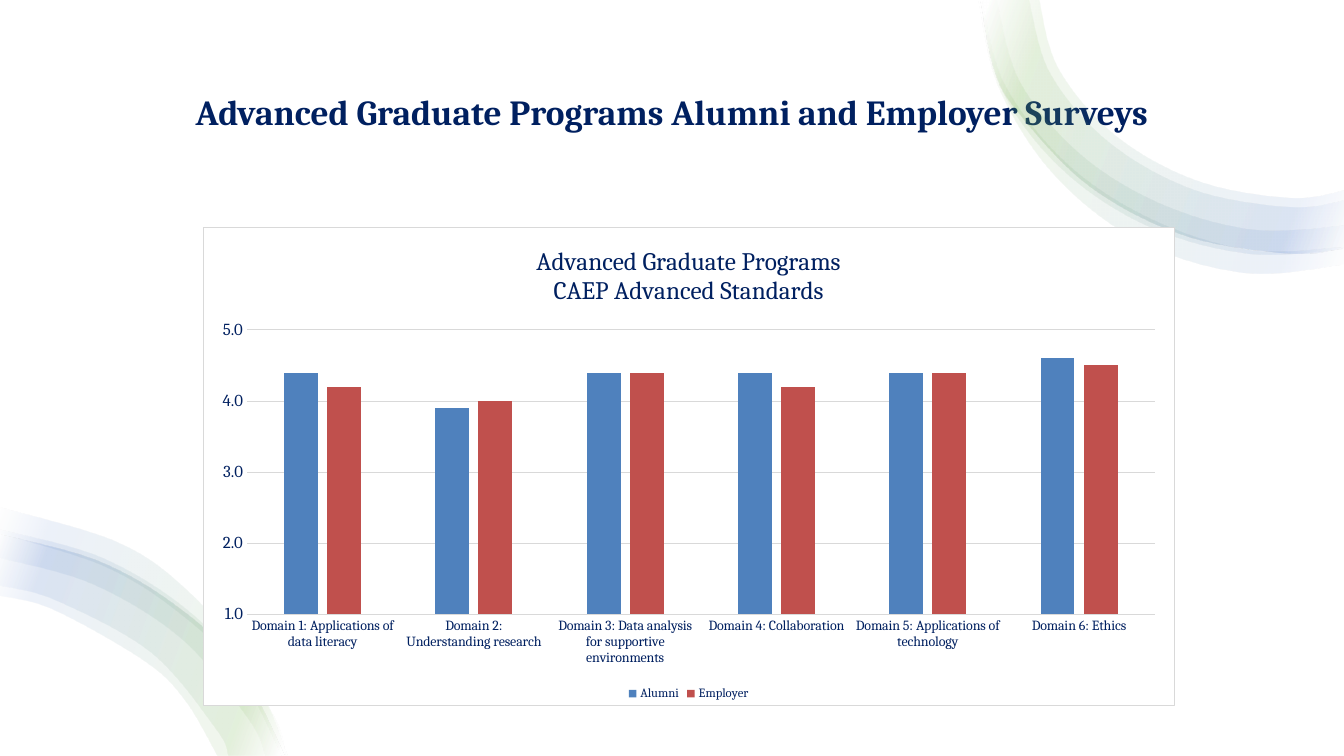
import lxml.etree
import pptx
import pptx.chart.data
import pptx.dml.color
import pptx.enum.chart
import pptx.enum.shapes
import pptx.enum.text
import pptx.oxml
import pptx.oxml.ns
import pptx.util

Inches, Pt = pptx.util.Inches, pptx.util.Pt
RGB = pptx.dml.color.RGBColor
qn = pptx.oxml.ns.qn
NAVY = RGB(0x00, 0x20, 0x60)
WHITE = RGB(0xFF, 0xFF, 0xFF)
GREY = RGB(0xD9, 0xD9, 0xD9)
GREEN = RGB(0x70, 0xAD, 0x47)
SKY = RGB(0x44, 0x72, 0xC4)
BLUE = RGB(0x4F, 0x81, 0xBD)
RED = RGB(0xC0, 0x50, 0x4D)
FONT = "Cambria"
STOPS = [(2, WHITE), (16, GREEN), (85, SKY), (100, WHITE)]
OPAQUE = 10  # percent

# Ribbon edges as (outer, inner) point lists, in inches within each corner box
TOP_RIM = [(.03, 0), (.16, .67), (.39, 1.1), (1.1, 1.84), (2.04, 2.33),
           (3.09, 2.51), (3.64, 2.45)]
TOP = [
    (TOP_RIM, [(.61, 0), (.8, .68), (1.36, 1.34), (2.17, 1.79),
               (3.09, 1.96), (3.64, 1.88)]),
    (TOP_RIM, [(.51, 0), (.72, .73), (1.3, 1.41), (2.14, 1.88),
               (3.09, 2.05), (3.64, 1.98)]),
    ([(.03, 0), (.24, .89), (.84, 1.68), (1.69, 2.24), (2.69, 2.51), (3.64, 2.46)],
     [(.19, 0), (.42, .81), (1.01, 1.52), (1.8, 2.01), (2.72, 2.27), (3.64, 2.23)]),
    ([(.01, 0), (.21, .87), (.76, 1.74), (1.61, 2.4), (2.66, 2.71), (3.64, 2.62)],
     [(.04, 0), (.27, .84), (.89, 1.63), (1.73, 2.18), (2.69, 2.48), (3.64, 2.45)]),
]
LOW_RIM = [(2.82, 2.5), (2.35, 1.59), (1.73, 1), (.96, .56), (0, .3)]
LOW = [
    ([(2.85, 2.5), (2.45, 1.57), (1.84, .85), (1.15, .38), (0, .04)],
     [(2.79, 2.5), (2.34, 1.64), (1.74, 1.06), (1.02, .62), (0, .3)]),
    (LOW_RIM, [(2.15, 2.5), (1.83, 1.95), (1.43, 1.56), (.53, 1.05), (0, .91)]),
    ([(2.83, 2.5), (2.68, 2.05), (2, 1.18), (1.06, .56), (0, .26)],
     [(2.63, 2.5), (2.47, 2.15), (1.82, 1.36), (.94, .81), (0, .54)]),
    (LOW_RIM, [(2.26, 2.5), (2.14, 2.24), (1.5, 1.48), (.56, .96), (0, .81)]),
]

CATS = ["Domain 1: Applications of data literacy",
        "Domain 2: Understanding research",
        "Domain 3: Data analysis for supportive environments",
        "Domain 4: Collaboration",
        "Domain 5: Applications of technology",
        "Domain 6: Ethics"]
SERIES = [("Alumni", BLUE, (4.4, 3.9, 4.4, 4.4, 4.4, 4.6)),
          ("Employer", RED, (4.2, 4.0, 4.4, 4.2, 4.4, 4.5))]


def style(font, size, bold=False):
    font.name, font.size, font.bold = FONT, Pt(size), bold
    font.color.rgb = NAVY


def bend(lines, pts):
    """Turn the straight steps between the points into smooth curves."""
    ends = [pts[0]] + pts + [pts[-1]]
    for line, a, b, c, d in zip(lines, ends, ends[1:], ends[2:], ends[3:]):
        line.tag = qn("a:cubicBezTo")
        near = [q + (r - p) / 6 for p, q, r in zip(a, b, c)]
        far = [r - (s - q) / 6 for q, r, s in zip(b, c, d)]
        for spot, (x, y) in enumerate((near, far)):
            knob = lxml.etree.Element(qn("a:pt"), x=str(round(x)), y=str(round(y)))
            line.insert(spot, knob)


def fade(shape, angle):
    """Give the shape a see-through gradient, clockwise angle in degrees."""
    stops = "".join(
        f'<a:gs pos="{pos * 1000}"><a:srgbClr val="{color}">'
        f'<a:alpha val="{OPAQUE * 1000}"/></a:srgbClr></a:gs>'
        for pos, color in STOPS)
    fill = pptx.oxml.parse_xml(
        f'<a:gradFill {pptx.oxml.ns.nsdecls("a")} rotWithShape="1">'
        f'<a:gsLst>{stops}</a:gsLst>'
        f'<a:lin ang="{angle * 60000}" scaled="0"/></a:gradFill>')
    shape.element.spPr.find(qn("a:custGeom")).addnext(fill)


def add_swirl(slide, left, top, bands, angle):
    for outer, inner in bands:
        pts = [(left + Inches(x), top + Inches(y)) for x, y in outer + inner[::-1]]
        pen = slide.shapes.build_freeform(*pts[0])
        pen.add_line_segments(pts[1:], close=True)
        ribbon = pen.convert_to_shape()
        ribbon.shadow.inherit = False
        ribbon.line.fill.background()
        lines = list(ribbon.element.iter(qn("a:lnTo")))
        local = [(x - ribbon.left, y - ribbon.top) for x, y in pts]
        count = len(outer)
        bend(lines[:count - 1], local[:count])
        bend(lines[count:], local[count:])
        fade(ribbon, angle)


def add_title(slide, left, top, width, height):
    title = slide.shapes.title
    title.left, title.top, title.width, title.height = left, top, width, height
    frame = title.text_frame
    frame.text = "Advanced Graduate Programs Alumni and Employer Surveys"
    frame.word_wrap = True
    frame.vertical_anchor = pptx.enum.text.MSO_ANCHOR.MIDDLE
    frame.margin_bottom = Inches(0.09)
    para = frame.paragraphs[0]
    para.alignment = pptx.enum.text.PP_ALIGN.CENTER
    para.line_spacing = 0.9
    style(para.font, 25.2, True)


def add_back(slide, width, height):
    """Place a white panel behind the title."""
    back = slide.shapes.add_shape(
        pptx.enum.shapes.MSO_SHAPE.RECTANGLE, 0, 0, width, height)
    back.shadow.inherit = False
    back.fill.solid()
    back.fill.fore_color.rgb = WHITE
    back.line.fill.background()
    slide.shapes.title.element.addprevious(back.element)


def add_bars(slide, left, top, width, height):
    data = pptx.chart.data.CategoryChartData(number_format="0.0")
    data.categories = CATS
    for name, _, vals in SERIES:
        data.add_series(name, vals)
    kind = pptx.enum.chart.XL_CHART_TYPE.COLUMN_CLUSTERED
    chart = slide.shapes.add_chart(kind, left, top, width, height, data).chart
    style(chart.font, 10)

    # Chart title
    frame = chart.chart_title.text_frame
    frame.text = "Advanced Graduate Programs\nCAEP Advanced Standards"
    for para in frame.paragraphs:
        style(para.font, 18)
    chart.chart_title.include_in_layout = False

    # Columns
    plot = chart.plots[0]
    plot.gap_width, plot.overlap = 219, -27
    plot.vary_by_categories = False
    for bars, (_, color, _) in zip(plot.series, SERIES):
        bars.format.fill.solid()
        bars.format.fill.fore_color.rgb = color

    # Axes
    cat, val = chart.category_axis, chart.value_axis
    for axis, size in ((cat, 10), (val, 12)):
        axis.major_tick_mark = pptx.enum.chart.XL_TICK_MARK.NONE
        style(axis.tick_labels.font, size)
    val.minimum_scale, val.maximum_scale, val.major_unit = 1, 5, 1
    val.tick_labels.number_format = "0.0"
    val.tick_labels.number_format_is_linked = False
    val.format.line.fill.background()
    for line in (cat.format.line, val.major_gridlines.format.line):
        line.color.rgb, line.width = GREY, Pt(0.75)

    # Legend
    chart.has_legend = True
    chart.legend.position = pptx.enum.chart.XL_LEGEND_POSITION.BOTTOM
    chart.legend.include_in_layout = False
    style(chart.legend.font, 9)

    # White panel with a thin border
    panel = pptx.oxml.parse_xml(
        f'<c:spPr {pptx.oxml.ns.nsdecls("c", "a")}>'
        f'<a:solidFill><a:srgbClr val="{WHITE}"/></a:solidFill>'
        f'<a:ln w="{Pt(0.75)}"><a:solidFill><a:srgbClr val="{GREY}"/>'
        '</a:solidFill></a:ln></c:spPr>')
    chart.element.find(qn("c:chart")).addnext(panel)


def main():
    deck = pptx.Presentation()
    deck.slide_width, deck.slide_height = Inches(13.33), Inches(7.5)
    slide = deck.slides.add_slide(deck.slide_layouts[5])
    add_back(slide, deck.slide_width, deck.slide_height)
    add_title(slide, Inches(0.88), Inches(0.5), Inches(11.57), Inches(1.3))
    add_swirl(slide, Inches(9.7), Inches(0), TOP, 20)
    add_swirl(slide, Inches(0), Inches(5), LOW, 200)
    add_bars(slide, Inches(2.01), Inches(2.25), Inches(9.64), Inches(4.75))
    deck.save("out.pptx")


if __name__ == "__main__":
    main()
